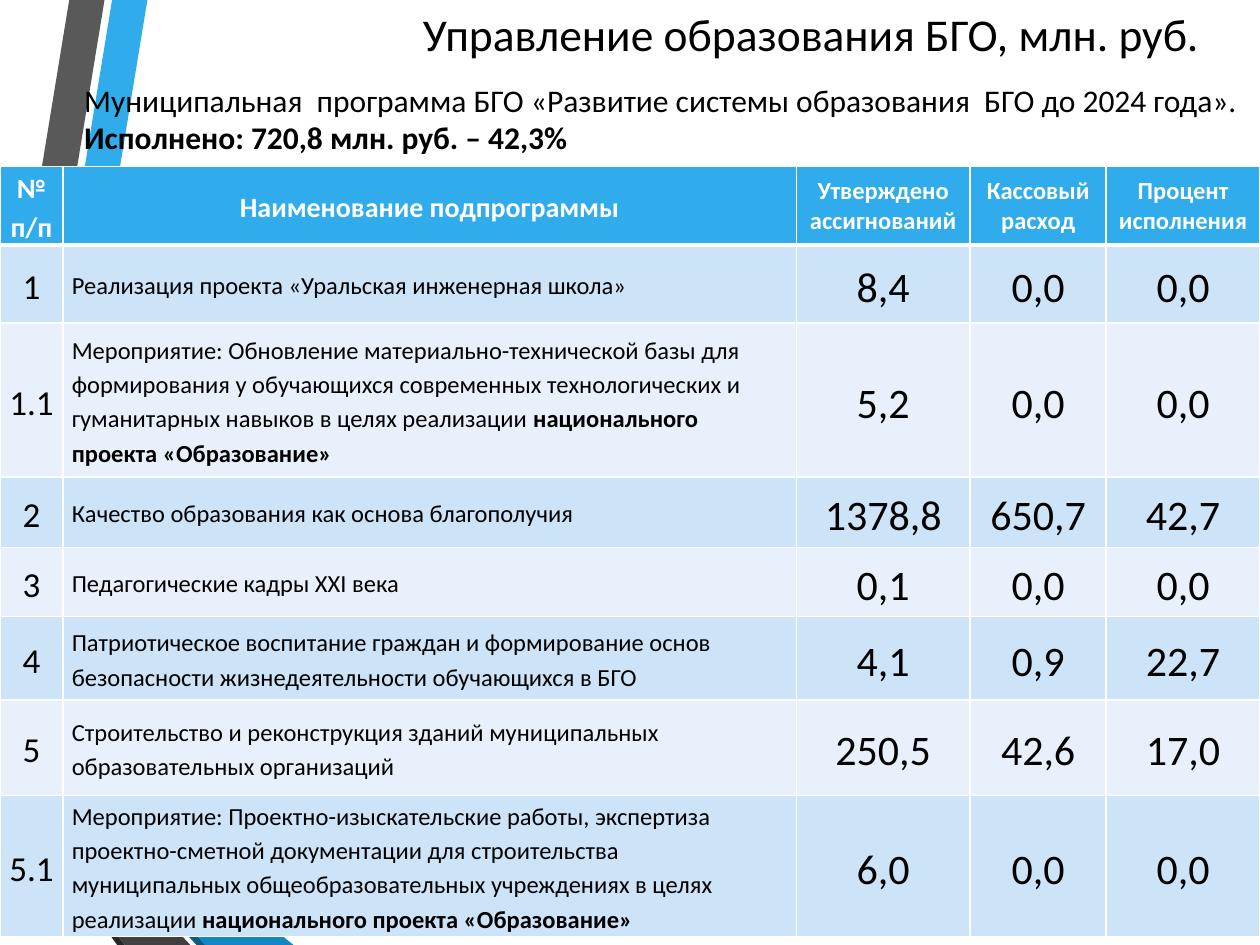
from dataclasses import dataclass

from lxml.etree import SubElement
from pptx import Presentation
from pptx.dml.color import RGBColor
from pptx.enum.text import MSO_ANCHOR as Anchor, MSO_AUTO_SIZE as AutoSize, PP_ALIGN as Align
from pptx.oxml.ns import qn
from pptx.util import Inches, Pt

TITLE = "Управление образования БГО, млн. руб."
PROGRAM = "Муниципальная  программа БГО «Развитие системы образования  БГО до 2024 года»."
RESULT = "Исполнено: 720,8 млн. руб. – 42,3%"
PROJECT = "национального проекта «Образование»"

HEADERS = ["№ п/п", "Наименование подпрограммы", "Утверждено ассигнований",
           "Кассовый расход", "Процент исполнения"]
ROWS = [
    ("1", ["Реализация проекта «Уральская инженерная школа»"], "8,4", "0,0", "0,0"),
    ("1.1", ["Мероприятие: Обновление материально-технической базы для формирования "
             "у обучающихся современных технологических и гуманитарных навыков "
             "в целях реализации ", PROJECT], "5,2", "0,0", "0,0"),
    ("2", ["Качество образования как основа благополучия"], "1378,8", "650,7", "42,7"),
    ("3", ["Педагогические кадры XXI века"], "0,1", "0,0", "0,0"),
    ("4", ["Патриотическое воспитание граждан и формирование основ безопасности "
           "жизнедеятельности обучающихся в БГО"], "4,1", "0,9", "22,7"),
    ("5", ["Строительство и реконструкция зданий муниципальных образовательных "
           "организаций"], "250,5", "42,6", "17,0"),
    ("5.1", ["Мероприятие: Проектно-изыскательские работы, экспертиза проектно-сметной "
             "документации для строительства муниципальных общеобразовательных "
             "учреждениях в целях реализации ", PROJECT], "6,0", "0,0", "0,0"),
]
COL_WIDTHS = [0.5, 5.82, 1.38, 1.08, 1.22]
ROW_HEIGHTS = [0.57, 0.62, 1.22, 0.56, 0.55, 0.66, 0.76, 1.12]

RIBBONS = [
    ("30ACEC", [(0, 5.44), (0, 5.75), (0.22, 5.79), (1.17, 0), (0.89, 0)]),
    ("595959", [(0.83, 0), (0.55, 0), (0, 3.36), (0, 5.06)]),
    ("262626", [(0, 6.19), (0, 6.21), (0.93, 7.5), (0.99, 7.5)]),
    ("0C5A82", [(0, 5.79), (0, 5.8), (1.56, 7.5), (1.63, 7.5)]),
    ("1287C3", [(0, 5.79), (1.63, 7.5), (2.33, 7.5), (0.22, 5.79), (0, 5.75)]),
    ("404040", [(0, 6.19), (0.99, 7.5), (1.51, 7.5), (0, 5.86)]),
]


@dataclass(frozen=True)
class Theme:
    font: str = "Calibri"
    text: str = "000000"
    light: str = "FFFFFF"
    header: str = "30ACEC"
    bands: tuple = ("CDE3F8", "E8F1FB")
    title: int = 26
    subtitle: int = 18
    header_sizes: tuple = (16, 16, 14, 14, 14)
    body_sizes: tuple = (20, 14, 24, 24, 24)


T = Theme()


def rgb(value):
    return RGBColor.from_string(value)


def add_run(p, text, size, color=T.text, bold=False):
    r = p.add_run()
    r.text = text
    r.font.name, r.font.size, r.font.bold = T.font, Pt(size), bold
    r.font.color.rgb = rgb(color)


def add_ribbon(s, color, points):
    (x, y), *rest = points
    fb = s.shapes.build_freeform(Inches(x), Inches(y), scale=1)
    fb.add_line_segments([(Inches(a), Inches(b)) for a, b in rest], close=True)
    sp = fb.convert_to_shape()
    sp.shadow.inherit = False
    sp.fill.solid()
    sp.fill.fore_color.rgb = rgb(color)
    sp.line.fill.background()


def add_text(s, box, lines, size, align):
    tf = s.shapes.add_textbox(*map(Inches, box)).text_frame
    tf.word_wrap = True
    tf.auto_size = AutoSize.SHAPE_TO_FIT_TEXT
    for i, (text, bold) in enumerate(lines):
        p = tf.add_paragraph() if i else tf.paragraphs[0]
        p.alignment = align
        add_run(p, text, size, bold=bold)


def set_borders(cell, widths):
    tcPr = cell._tc.get_or_add_tcPr()
    for side, width in zip("LRTB", widths):
        ln = SubElement(tcPr, qn(f"a:ln{side}"), w=str(Pt(width)))
        SubElement(SubElement(ln, qn("a:solidFill")), qn("a:srgbClr"), val=T.light)


def fill_cell(cell, row, col, content):
    header = row == 0
    cell.margin_left = cell.margin_right = Inches(0.07)
    cell.margin_top = cell.margin_bottom = 0
    cell.vertical_anchor = Anchor.MIDDLE
    set_borders(cell, (1, 1, 3 if row == 1 else 1, 3 if header else 1))
    cell.fill.solid()
    cell.fill.fore_color.rgb = rgb(T.header if header else T.bands[(row - 1) % 2])
    p = cell.text_frame.paragraphs[0]
    p.alignment = Align.LEFT if col == 1 and not header else Align.CENTER
    p.line_spacing = 1.0 if header and col > 1 else 1.15
    size = (T.header_sizes if header else T.body_sizes)[col]
    parts = content if isinstance(content, list) else [content]
    for i, text in enumerate(parts):
        add_run(p, text, size, T.light if header else T.text, header or i > 0)


def add_programs(s):
    data = [HEADERS, *ROWS]
    table = s.shapes.add_table(len(data), len(HEADERS), 0, Inches(1.32), Inches(sum(COL_WIDTHS)),
                               Inches(sum(ROW_HEIGHTS))).table
    for column, width in zip(table.columns, COL_WIDTHS):
        column.width = Inches(width)
    for row, height in zip(table.rows, ROW_HEIGHTS):
        row.height = Inches(height)
    for i, values in enumerate(data):
        for j, content in enumerate(values):
            fill_cell(table.cell(i, j), i, j, content)


def main():
    """Build the slide on education programme spending."""
    prs = Presentation()
    prs.slide_width, prs.slide_height = Inches(10), Inches(7.5)
    s = prs.slides.add_slide(prs.slide_layouts[6])
    for color, points in RIBBONS:
        add_ribbon(s, color, points)
    add_programs(s)
    add_text(s, (3.01, 0, 6.86, 0.54), [(TITLE, False)], T.title, Align.CENTER)
    add_text(s, (0.57, 0.59, 9.52, 0.71), [(PROGRAM, False), (RESULT, True)],
             T.subtitle, Align.LEFT)
    prs.save("out.pptx")


if __name__ == "__main__":
    main()
